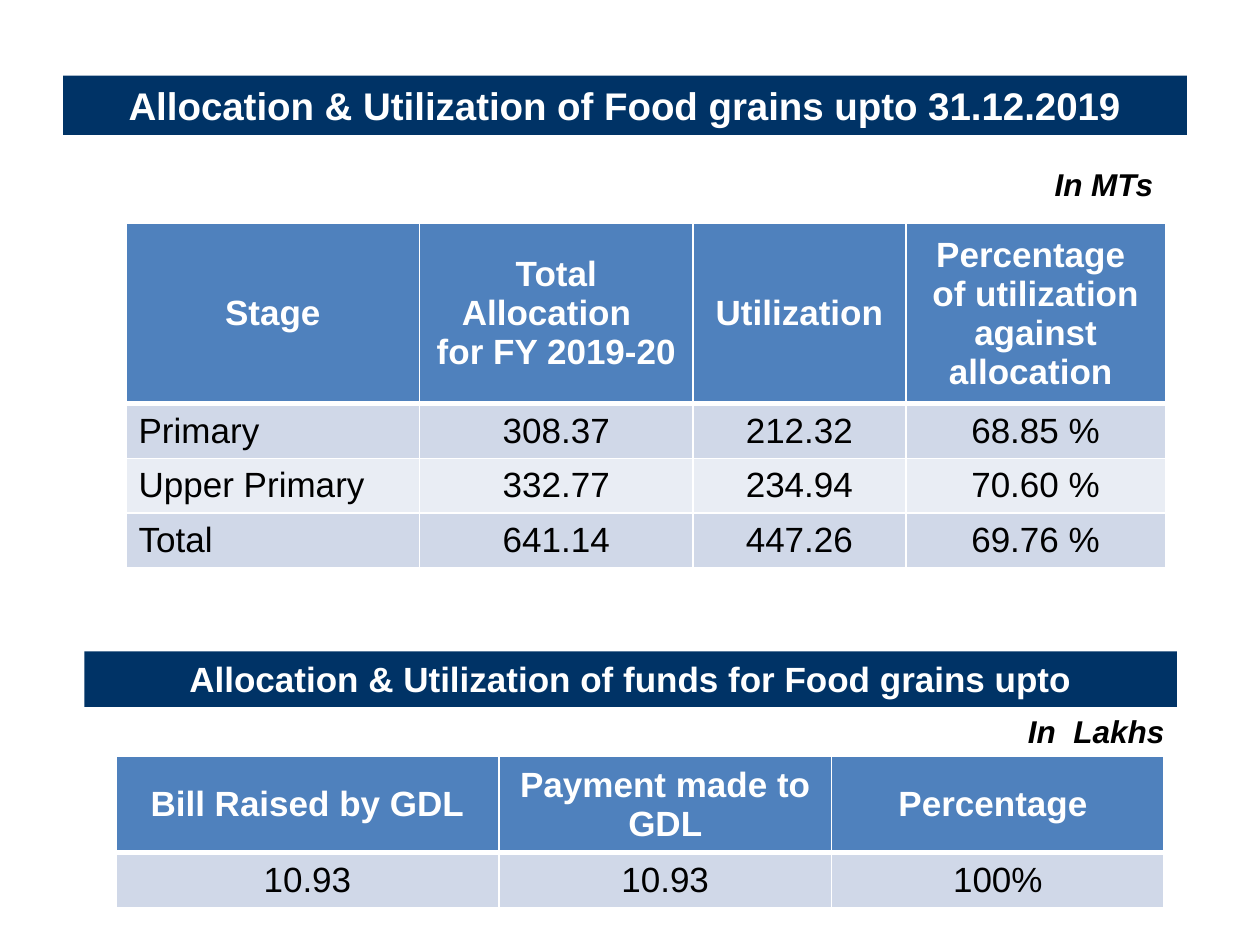
from pptx import Presentation
from pptx.dml.color import RGBColor
from pptx.enum.shapes import MSO_SHAPE
from pptx.enum.text import MSO_ANCHOR as Anchor, MSO_AUTO_SIZE as Auto, PP_ALIGN as Align
from pptx.oxml import parse_xml
from pptx.oxml.ns import nsdecls
from pptx.util import Inches, Pt

FONT = "Arial"
NAVY = RGBColor(0x00, 0x33, 0x66)
BLUE = RGBColor(0x4F, 0x81, 0xBD)
BANDS = (RGBColor(0xD0, 0xD8, 0xE8), RGBColor(0xE9, 0xED, 0xF4))
WHITE = RGBColor(0xFF, 0xFF, 0xFF)
BLACK = RGBColor(0x00, 0x00, 0x00)

GRAIN = [
    ["Stage", "Total Allocation  \nfor FY 2019-20", "Utilization",
     "Percentage  of utilization against allocation "],
    ["Primary", "308.37", "212.32", "68.85 %"],
    ["Upper Primary", "332.77", "234.94", "70.60 %"],
    ["Total", "641.14", "447.26", "69.76 %"],
]
FUNDS = [
    ["Bill Raised by GDL", "Payment made to GDL", "Percentage "],
    ["10.93", "10.93", "100%"],
]


def place(shape, box):
    shape.left, shape.top, shape.width, shape.height = map(Inches, box)


def write(frame, text, size, color, align, bold=True, italic=False):
    frame.text = text
    for para in frame.paragraphs:
        para.alignment = align
        for run in para.runs:
            font = run.font
            font.name, font.size = FONT, Pt(size)
            font.bold, font.italic = bold, italic
            font.color.rgb = color


def banner(shape, box, text, size):
    """Turn a shape into a navy heading bar."""
    place(shape, box)
    shape.fill.solid()
    shape.fill.fore_color.rgb = NAVY
    shape.line.fill.background()
    frame = shape.text_frame
    frame.word_wrap = True
    frame.auto_size = Auto.NONE
    frame.vertical_anchor = Anchor.TOP
    write(frame, text, size, WHITE, Align.CENTER)


def unit(slide, box, text):
    """Add the note that names the unit of the table below it."""
    frame = slide.shapes.add_textbox(*map(Inches, box)).text_frame
    frame.word_wrap = True
    write(frame, text, 18, BLACK, Align.RIGHT, italic=True)


def edge(cell, head, first):
    """Draw white cell borders, thick between the header and the body."""
    widths = {"L": 1, "R": 1, "T": 3 if first else 1, "B": 3 if head else 1}
    props = cell._tc.get_or_add_tcPr()
    for i, (side, width) in enumerate(widths.items()):
        props.insert(i, parse_xml(
            f'<a:ln{side} {nsdecls("a")} w="{Pt(width)}"><a:solidFill>'
            f'<a:srgbClr val="{WHITE}"/></a:solidFill></a:ln{side}>'))


def grid(slide, box, rows, cols, heights, label=False):
    """Add a banded table; label sets the first body column to the left."""
    table = slide.shapes.add_table(len(rows), len(cols), *map(Inches, box)).table
    for col, width in zip(table.columns, cols):
        col.width = Inches(width)
    for r, row in enumerate(rows):
        head = r == 0
        table.rows[r].height = Inches(heights[0 if head else 1])
        for c, text in enumerate(row):
            cell = table.cell(r, c)
            cell.vertical_anchor = Anchor.MIDDLE
            cell.fill.solid()
            cell.fill.fore_color.rgb = BLUE if head else BANDS[(r - 1) % 2]
            left = label and c == 0 and not head
            write(cell.text_frame, text, 20, WHITE if head else BLACK,
                  Align.LEFT if left else Align.CENTER, bold=head)
            edge(cell, head, r == 1)


def grain(slide):
    banner(slide.shapes.title, (0.5, 0.6, 8.92, 0.47),
           "Allocation & Utilization of Food grains upto 31.12.2019", 22)
    unit(slide, (8, 1.26, 1.25, 0.4), "In MTs")
    grid(slide, (1, 1.77, 8.25, 2.73), GRAIN,
         (2.33, 2.17, 1.69, 2.06), (1.43, 0.43), label=True)


def funds(slide):
    box = (0.67, 5.17, 8.67, 0.44)
    bar = slide.shapes.add_shape(MSO_SHAPE.RECTANGLE, *map(Inches, box))
    bar.shadow.inherit = False
    banner(bar, box, "Allocation & Utilization of funds for Food grains upto", 20)
    unit(slide, (7.42, 5.6, 1.92, 0.4), "In  Lakhs")
    grid(slide, (0.92, 6, 8.33, 1.2), FUNDS, (3.04, 2.64, 2.64), (0.76, 0.44))


def main():
    deck = Presentation()
    deck.slide_width, deck.slide_height = Inches(10), Inches(7.5)
    slide = deck.slides.add_slide(deck.slide_layouts[5])
    grain(slide)
    funds(slide)
    deck.save("out.pptx")


if __name__ == "__main__":
    main()
